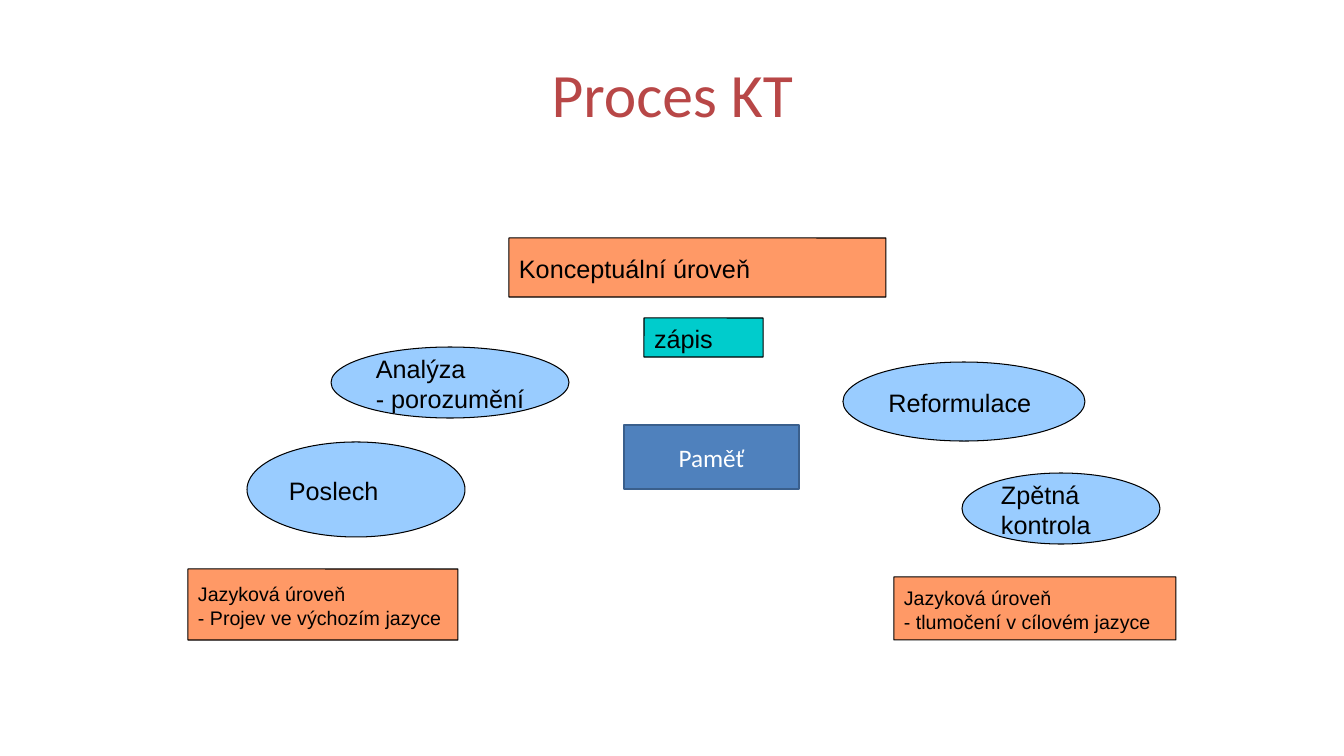
import pptx
import pptx.dml.color
import pptx.enum.shapes
import pptx.enum.text
import pptx.util

RGB = pptx.dml.color.RGBColor
SHAPE = pptx.enum.shapes.MSO_SHAPE
ALIGN = pptx.enum.text.PP_ALIGN
MIDDLE = pptx.enum.text.MSO_ANCHOR.MIDDLE

EMU_PER_PX = 914400 / 100.8
RED = RGB(0xB8, 0x47, 0x47)
ORANGE = RGB(0xFF, 0x99, 0x66)
TEAL = RGB(0x00, 0xCC, 0xCC)
SKY = RGB(0x99, 0xCC, 0xFF)
BLUE = RGB(0x4F, 0x81, 0xBD)
DARK_BLUE = RGB(0x3A, 0x5F, 0x8C)
BLACK = RGB(0x00, 0x00, 0x00)
WHITE = RGB(0xFF, 0xFF, 0xFF)


def px(n):
    return pptx.util.Emu(round(n * EMU_PER_PX))


class Diagram:
    def __init__(self, width, height):
        self.prs = pptx.Presentation()
        self.prs.slide_width, self.prs.slide_height = px(width), px(height)
        self.s = self.prs.slides.add_slide(self.prs.slide_layouts[5])

    def set_text(self, sp, paragraphs, size, font, color, align, insets, wrap):
        """Fill a shape with paragraphs, each a list of lines."""
        tf = sp.text_frame
        tf.word_wrap = wrap
        tf.vertical_anchor = MIDDLE
        tf.margin_left, tf.margin_top, tf.margin_right, tf.margin_bottom = map(px, insets)
        for i, lines in enumerate(paragraphs):
            p = tf.add_paragraph() if i else tf.paragraphs[0]
            p.alignment = align
            for j, line in enumerate(lines):
                if j:
                    p.add_line_break()
                r = p.add_run()
                r.text = line
                r.font.size = pptx.util.Pt(size)
                r.font.name = font
                r.font.color.rgb = color

    def title(self, text, x, y, w, h):
        sp = self.s.shapes.title
        sp.left, sp.top, sp.width, sp.height = map(px, (x, y, w, h))
        self.set_text(sp, [[text]], 44, "Calibri", RED, ALIGN.CENTER, (10, 4, 10, 5), True)

    def shape(self, kind, box, fill, line, line_width):
        sp = self.s.shapes.add_shape(kind, *map(px, box))
        sp.shadow.inherit = False
        sp.fill.solid()
        sp.fill.fore_color.rgb = fill
        sp.line.color.rgb = line
        sp.line.width = pptx.util.Pt(line_width)
        return sp

    def node(self, kind, box, fill, paragraphs, size=18):
        """Outlined node whose left-aligned text block sits in its middle."""
        sp = self.shape(kind, box, fill, BLACK, 0.75)
        if kind == SHAPE.ROUNDED_RECTANGLE:
            sp.adjustments[0] = 0.002
        self.set_text(sp, paragraphs, size, "Arial", BLACK, ALIGN.LEFT, (10, 7, 10, 5), False)

    def memory(self, text, box):
        sp = self.shape(SHAPE.RECTANGLE, box, BLUE, DARK_BLUE, 2)
        self.set_text(sp, [[text]], 18, "Calibri", WHITE, ALIGN.CENTER, (10, 5, 10, 5), True)


def main():
    d = Diagram(1344, 756)
    d.title("Proces KT", 219, 30, 907, 126)
    box, oval = SHAPE.ROUNDED_RECTANGLE, SHAPE.OVAL
    d.node(box, (188, 569, 270, 71), ORANGE,
           [["Jazyková úroveň"], ["- Projev ve výchozím jazyce"]], 14)
    d.node(box, (644, 318, 119, 39), TEAL, [["zápis"]])
    d.node(oval, (247, 442, 218, 95), SKY, [["Poslech"]])
    d.node(oval, (331, 347, 238, 71), SKY, [["Analýza"], ["- porozumění"]])
    d.node(box, (509, 238, 377, 59), ORANGE, [["Konceptuální úroveň"]])
    d.node(box, (894, 577, 282, 63), ORANGE,
           [["Jazyková úroveň"], ["- tlumočení v cílovém jazyce"]], 14)
    d.node(oval, (843, 362, 242, 79), SKY, [["Reformulace"]])
    d.node(oval, (962, 473, 198, 71), SKY, [["Zpětná", "kontrola"]])
    d.memory("Paměť", (624, 425, 175, 64))
    d.prs.save("out.pptx")


if __name__ == "__main__":
    main()
